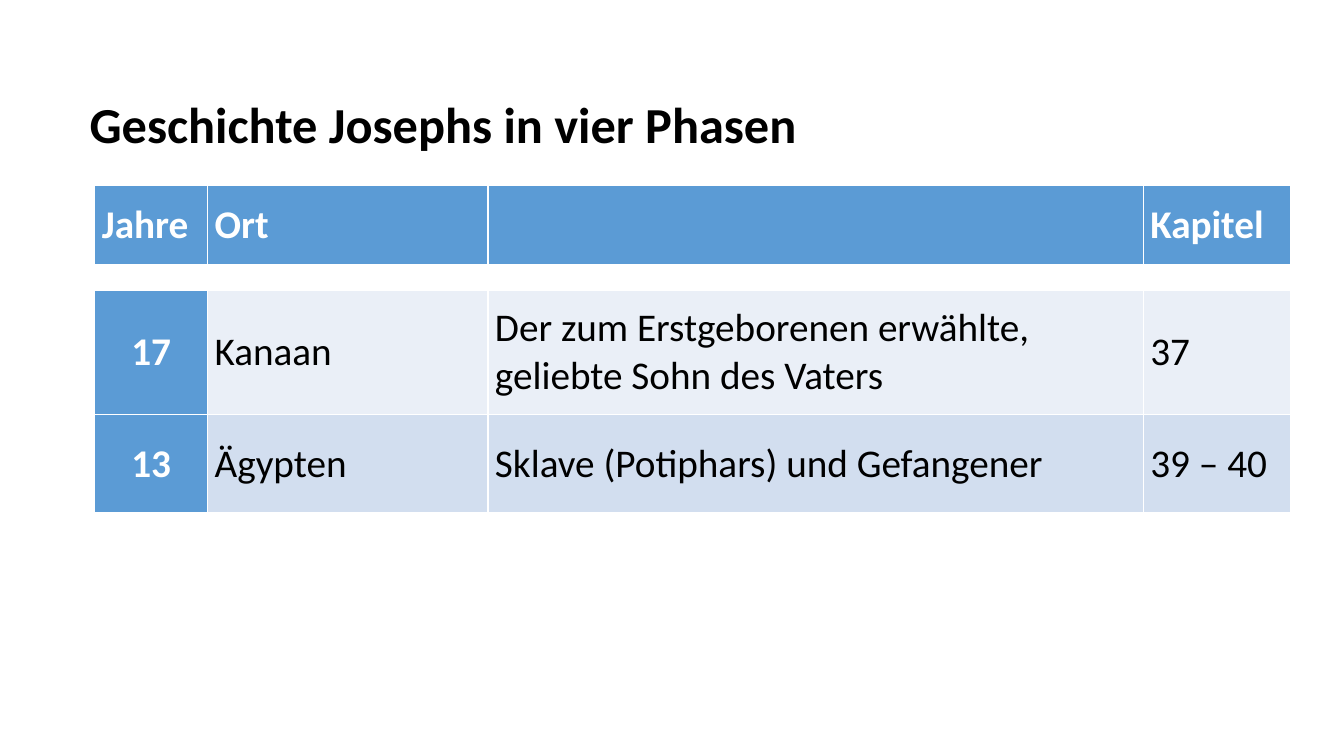
"""Build a slide with a table of the phases of Joseph's story."""
from lxml.etree import SubElement
from pptx import Presentation
from pptx.dml.color import RGBColor
from pptx.enum.text import MSO_ANCHOR, MSO_AUTO_SIZE, PP_ALIGN
from pptx.oxml.ns import qn
from pptx.util import Inches, Pt

BLACK = RGBColor(0x00, 0x00, 0x00)
WHITE = RGBColor(0xFF, 0xFF, 0xFF)
BLUE = RGBColor(0x5B, 0x9B, 0xD5)
PALE_BLUE = RGBColor(0xEA, 0xEF, 0xF7)
LIGHT_BLUE = RGBColor(0xD2, 0xDE, 0xEF)

COLUMN_WIDTHS = [1.12, 2.78, 6.5, 1.46]
ROWS = [
    (0.78, BLUE, BLUE, "LRT", ["Jahre", "Ort", "", "Kapitel"]),
    (0.26, WHITE, WHITE, "", ["", "", "", ""]),
    (1.23, BLUE, PALE_BLUE, "LRB",
     ["17", "Kanaan", "Der zum Erstgeborenen erwählte, geliebte Sohn des Vaters", "37"]),
    (0.98, BLUE, LIGHT_BLUE, "LRTB",
     ["13", "Ägypten", "Sklave (Potiphars) und Gefangener", "39 – 40"]),
]


def add_text(paragraph, text, size, color, bold):
    run = paragraph.add_run()
    run.text = text
    run.font.color.rgb = color
    for name, value in {"name": "Calibri", "size": Pt(size), "bold": bold}.items():
        setattr(run.font, name, value)


def add_border(cell, side):
    properties = cell._tc.get_or_add_tcPr()
    line = SubElement(properties, qn(f"a:ln{side}"), w=str(Pt(1)))
    fill = SubElement(line, qn("a:solidFill"))
    SubElement(fill, qn("a:srgbClr"), val=str(WHITE))


presentation = Presentation()
presentation.slide_width = Inches(13.33)
presentation.slide_height = Inches(7.5)
slide = presentation.slides.add_slide(presentation.slide_layouts[6])

title = slide.shapes.add_textbox(Inches(0.79), Inches(0.87), Inches(7.29), Inches(0.71))
title.text_frame.word_wrap = False
title.text_frame.auto_size = MSO_AUTO_SIZE.SHAPE_TO_FIT_TEXT
add_text(title.text_frame.paragraphs[0], "Geschichte Josephs in vier Phasen", 36, BLACK, True)

table = slide.shapes.add_table(
    len(ROWS), len(COLUMN_WIDTHS), Inches(0.94), Inches(1.84), Inches(11.86), Inches(3.25)
).table
table.first_row = False
table.horz_banding = False
for column, width in zip(table.columns, COLUMN_WIDTHS):
    column.width = Inches(width)

cell_format = {
    "vertical_anchor": MSO_ANCHOR.MIDDLE,
    "margin_left": Inches(0.07),
    "margin_right": Inches(0.07),
    "margin_top": 0,
    "margin_bottom": 0,
}
for row_index, (height, first_fill, fill, sides, texts) in enumerate(ROWS):
    table.rows[row_index].height = Inches(height)
    for column_index, text in enumerate(texts):
        cell = table.cell(row_index, column_index)
        for name, value in cell_format.items():
            setattr(cell, name, value)
        for side in sides:
            add_border(cell, side)
        cell.fill.solid()
        cell.fill.fore_color.rgb = first_fill if column_index == 0 else fill
        paragraph = cell.text_frame.paragraphs[0]
        if not text:
            SubElement(paragraph._p, qn("a:endParaRPr"), sz="800")
            continue
        heading = row_index == 0 or column_index == 0
        add_text(paragraph, text, 28, WHITE if heading else BLACK, heading)
        if row_index > 0 and column_index == 0:
            paragraph.alignment = PP_ALIGN.CENTER

presentation.save("out.pptx")
